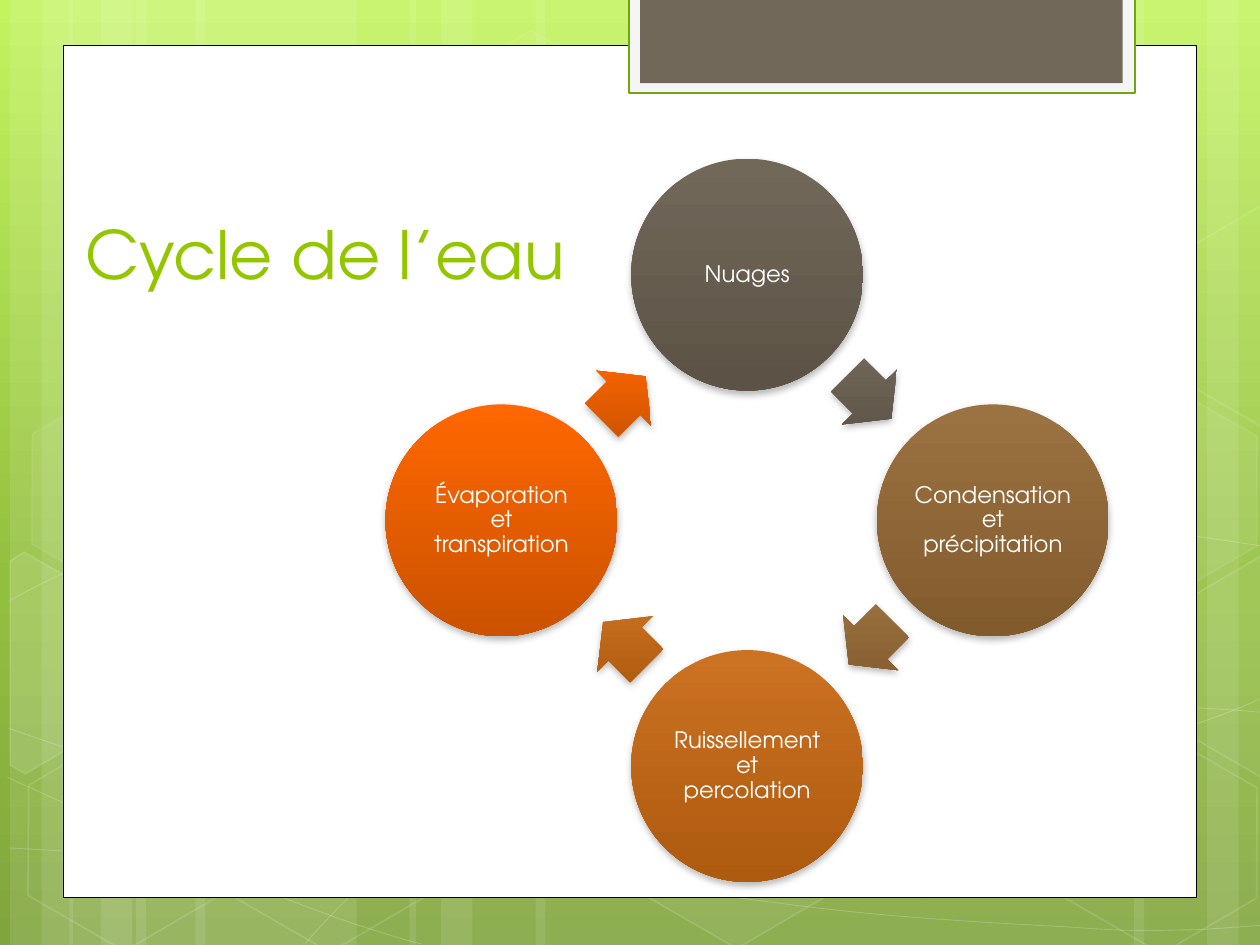
import math
from lxml import etree
from pptx import Presentation, util as u
from pptx.dml import color
from pptx.enum import shapes as sh, text as tx
from pptx.oxml import ns

FONT = "TeX Gyre Adventor"
KIND = sh.MSO_SHAPE


def tone(fill, root, hue, alpha=100):
    """Solid fill from one hex string, or a downward gradient from (pos, hex) stops."""
    if isinstance(hue, str):
        fill.solid()
        fill.fore_color.rgb = color.RGBColor.from_string(hue)
        if alpha < 100:
            dot = root.find(ns.qn("a:solidFill"))[0]
            etree.SubElement(dot, ns.qn("a:alpha"), val=str(alpha * 1000))
        return
    fill.gradient()
    fill.gradient_angle = 270
    grad = root.find(ns.qn("a:gradFill"))
    grad.set("rotWithShape", "0")
    stops = grad.find(ns.qn("a:gsLst"))
    for old in list(stops):
        stops.remove(old)
    for pos, code in hue:
        stop = etree.SubElement(stops, ns.qn("a:gs"), pos=str(pos * 1000))
        etree.SubElement(stop, ns.qn("a:srgbClr"), val=code)


def dress(shape, hue=None, alpha=100, line=None, width=1, fade=100):
    """Set fill and outline; None means none."""
    shape.shadow.inherit = False
    root = shape.element.spPr
    if hue:
        tone(shape.fill, root, hue, alpha)
    else:
        shape.fill.background()
    if line:
        shape.line.width = u.Pt(width)
        tone(shape.line.fill, root.find(ns.qn("a:ln")), line, fade)
    else:
        shape.line.fill.background()


deck = Presentation()
deck.slide_width, deck.slide_height = u.Inches(10), u.Inches(7.5)
slide = deck.slides.add_slide(deck.slide_layouts[6])
items = slide.shapes

# Green background
back = slide.background.fill
tone(back, slide.element.find(".//" + ns.qn("p:bgPr")),
     [(0, "C3F35F"), (62, "93BF3F"), (100, "81A53E")])

# Pale vertical bands; those on the right are turned round
for left, wide in [(1.08, 1.75), (0.08, 0.5), (0.33, 0.83), (1.55, 1.75),
                   (0.55, 0.5), (0.8, 0.83), (7.33, 1.75), (9.58, 0.5),
                   (9, 0.83), (4.25, 3.08), (3.25, 0.5), (3.5, 0.83)]:
    band = items.add_shape(KIND.RECTANGLE, u.Inches(left), 0, u.Inches(wide), u.Inches(7.5))
    band.rotation = 180 if left > 7 else 0
    dress(band, "FFFFFF", 10)

# Thin curves: C takes the next three points as a Bezier piece, L one as a line
curves = [
    ("CCCC", [(0.07, 6.73), (0.61, 6.76), (1.15, 6.79), (1.9, 6.78), (2.65, 6.77),
              (3.58, 6.75), (4.58, 6.65), (5.58, 6.55), (7, 6.36), (7.92, 6.17),
              (8.83, 5.98), (9.77, 5.68), (10.07, 5.51)]),
    ("CCCC", [(0.07, 4.77), (0.36, 4.61), (0.65, 4.46), (1.21, 4.31), (1.78, 4.16),
              (2.59, 3.94), (3.47, 3.87), (4.36, 3.8), (5.44, 3.79), (6.54, 3.87),
              (7.64, 3.95), (9.47, 4.26), (10.07, 4.34)]),
    ("C", [(0.06, 6.17), (1.27, 6.72), (2.47, 7.27), (3.34, 7.49)]),
    ("CCCCCC", [(0.07, 5.78), (0.38, 5.89), (0.7, 6), (1.28, 6.16), (1.86, 6.31),
                (2.73, 6.56), (3.57, 6.73), (4.4, 6.9), (5.45, 7.08), (6.28, 7.18),
                (7.11, 7.29), (8, 7.33), (8.53, 7.36), (9.05, 7.4), (9.19, 7.38),
                (9.45, 7.38), (9.71, 7.37), (9.89, 7.35), (10.07, 7.34)]),
    ("CCCCCCCLCC", [(2.42, 7.49), (2.6, 7.29), (2.78, 7.09), (3.02, 6.91), (3.26, 6.73),
                    (3.6, 6.53), (3.88, 6.39), (4.16, 6.25), (4.33, 6.19), (4.7, 6.09),
                    (5.06, 5.99), (5.73, 5.85), (6.08, 5.78), (6.44, 5.71), (6.49, 5.71),
                    (6.8, 5.69), (7.11, 5.66), (7.6, 5.63), (7.94, 5.62), (8.29, 5.61),
                    (8.86, 5.62), (8.86, 5.62), (9.53, 5.62), (9.71, 5.63), (9.88, 5.64),
                    (9.97, 5.65), (10.06, 5.66), (10.03, 5.65), (10.06, 5.66)]),
]
for moves, knots in curves:
    spots = [(u.Inches(x), u.Inches(y)) for x, y in knots]
    pen = items.build_freeform(*spots[0])
    pen.add_line_segments(spots[1:], close=False)
    curve = pen.convert_to_shape()
    legs = iter(curve.element.findall(".//" + ns.qn("a:lnTo")))
    for move in moves:
        leg = next(legs)
        if move == "C":
            leg.tag = ns.qn("a:cubicBezTo")
            for extra in (next(legs), next(legs)):
                leg.append(extra[0])
                extra.getparent().remove(extra)
    dress(curve, None, line="FFFFFF", width=0.5, fade=20)

# Hexagons: left, top, fill opacity, line opacity
for left, top, alpha, fade in [(3.34, 0.36, 4, 8), (4.97, 5.89, 6, 12), (0.11, 5.91, 0, 12),
                               (0.14, 3.12, 7, 8), (1.74, 5.92, 0, 12), (7.53, 4.53, 10, 12),
                               (8.34, 5.93, 0, 12), (8.34, 3.14, 7, 8)]:
    cell = items.add_shape(KIND.HEXAGON, u.Inches(left), u.Inches(top),
                           u.Inches(1.75), u.Inches(1.52))
    cell.adjustments[0] = 0.285
    cell.rotation = 30
    dress(cell, "FFFFFF" if alpha else None, alpha, "FFFFFF", 1, fade)

# Hexagons cut by the slide edge: centre, fill opacity, corners as seen
cos, sin = math.cos(math.radians(30)), math.sin(math.radians(30))
for mx, my, alpha, ends in [
        (0.36, 5.35, 10, [(0.08, 4.45), (0.19, 4.38), (0.96, 4.82), (0.95, 5.7),
                          (0.2, 6.14), (0.08, 6.07)]),
        (9.85, 5.2, 4, [(9.26, 4.85), (10.01, 4.41), (10.09, 4.46), (10.09, 6.13),
                        (10.02, 6.17), (9.26, 5.73)]),
        (9.85, 2.41, 0, [(9.26, 2.07), (10.01, 1.63), (10.1, 1.68), (10.09, 3.35),
                         (10.02, 3.39), (9.26, 2.95)])]:
    turned = [(u.Inches(mx + (x - mx) * cos + (y - my) * sin),
               u.Inches(my - (x - mx) * sin + (y - my) * cos)) for x, y in ends]
    pen = items.build_freeform(*turned[0])
    pen.add_line_segments(turned[1:], close=True)
    part = pen.convert_to_shape()
    part.rotation = 30
    dress(part, "FFFFFF" if alpha else None, alpha, "FFFFFF", 1, 12)

# White page and the tab on top
for box, hue, line, width in [((0.5, 0.36, 9, 6.76), "FFFFFF", "000000", 0.5),
                              ((4.99, -0.02, 4.02, 0.76), "F5F5F5", "74A510", 1.25),
                              ((5.08, -0.02, 3.83, 0.68), "71685A", None, 0)]:
    panel = items.add_shape(KIND.RECTANGLE, *[u.Inches(v) for v in box])
    dress(panel, hue, line=line, width=width)

# Title
head = items.add_textbox(u.Inches(0.58), u.Inches(1.12), u.Inches(7.68), u.Inches(1.25))
frame = head.text_frame
frame.word_wrap = True
frame.vertical_anchor = tx.MSO_ANCHOR.BOTTOM
run = frame.paragraphs[0].add_run()
run.text = "Cycle de l’eau"
run.font.name, run.font.size = FONT, u.Pt(38)
run.font.color.rgb = color.RGBColor.from_string("94C600")

# Water cycle: each stage and its arrow turn a quarter about the centre
MX, MY, SIZE, TEXT = 5.93, 4.13, 1.84, 1.3
stages = [(["Nuages"], "71685A", "5C5346"),
          (["Condensation", "et", "précipitation"], "9B7241", "825B2D"),
          (["Ruissellement", "et", "percolation"], "CB7223", "AE5A0F"),
          (["Évaporation", "et", "transpiration"], "FF6700", "CB5200")]
node, tip = (0, -1.95), (0.97, -0.98)
for i, (words, light, dark) in enumerate(stages):
    x, y = MX + node[0], MY + node[1]
    disc = items.add_shape(KIND.OVAL, u.Inches(x - SIZE / 2), u.Inches(y - SIZE / 2),
                           u.Inches(SIZE), u.Inches(SIZE))
    label = items.add_textbox(u.Inches(x - TEXT / 2), u.Inches(y - TEXT / 2),
                              u.Inches(TEXT), u.Inches(TEXT))
    arrow = items.add_shape(KIND.RIGHT_ARROW, u.Inches(MX + tip[0] - 0.245),
                            u.Inches(MY + tip[1] - 0.31), u.Inches(0.49), u.Inches(0.62))
    arrow.adjustments[0], arrow.adjustments[1] = 0.6, 0.5
    arrow.rotation = 45 + 90 * i
    for shape in (disc, arrow):
        dress(shape, [(0, light), (100, dark)])
        glow = etree.SubElement(shape.element.spPr.find(ns.qn("a:effectLst")),
                                ns.qn("a:outerShdw"), blurRad=str(u.Pt(4)),
                                dist=str(u.Pt(2)), dir="5400000", rotWithShape="0")
        ink = etree.SubElement(glow, ns.qn("a:srgbClr"), val="000000")
        etree.SubElement(ink, ns.qn("a:alpha"), val="28000")

    frame = label.text_frame
    frame.word_wrap = True
    frame.vertical_anchor = tx.MSO_ANCHOR.MIDDLE
    frame.margin_left = frame.margin_right = u.Inches(0.02)
    frame.margin_top = frame.margin_bottom = u.Inches(0.02)
    para = frame.paragraphs[0]
    para.alignment, para.line_spacing = tx.PP_ALIGN.CENTER, 0.9
    for n, word in enumerate(words):
        if n:
            para.add_line_break()
        run = para.add_run()
        run.text = word
        run.font.name, run.font.size = FONT, u.Pt(13)
        run.font.color.rgb = color.RGBColor.from_string("FFFFFF")
    node, tip = (-node[1], node[0]), (-tip[1], tip[0])

deck.save("out.pptx")
